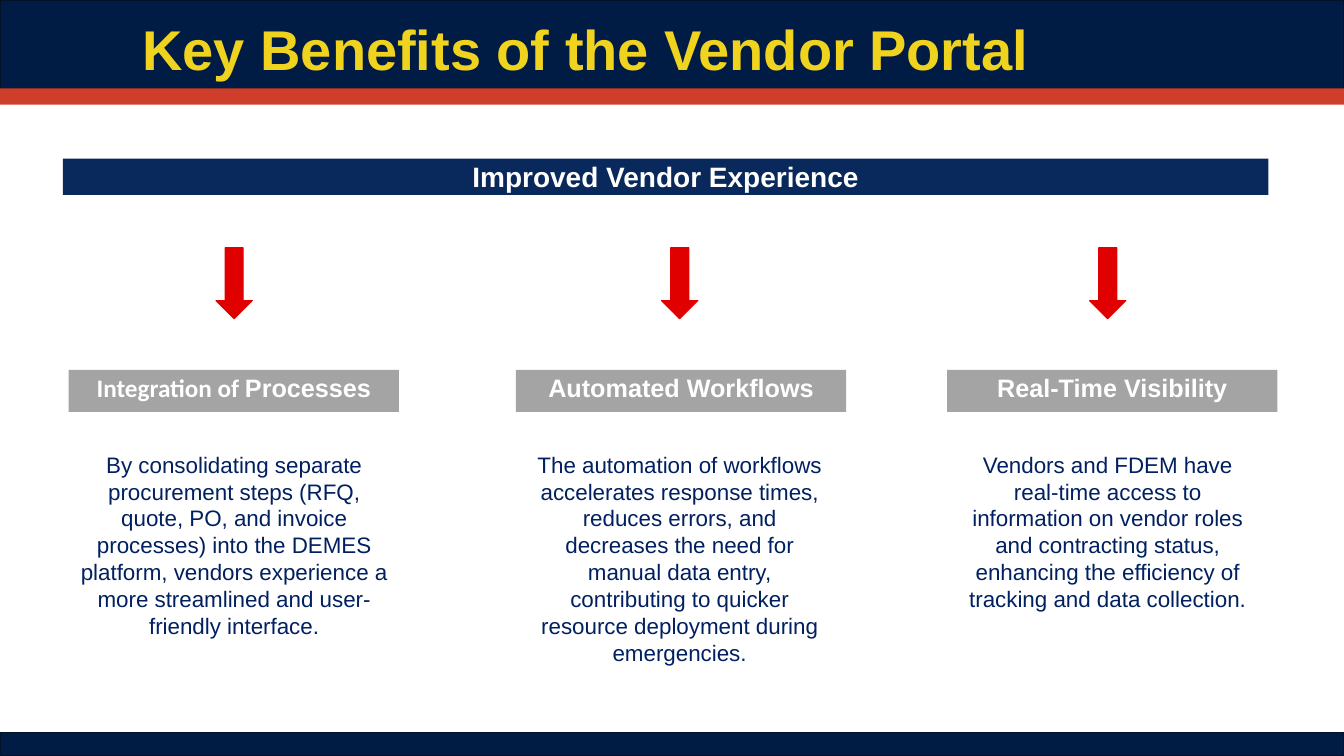
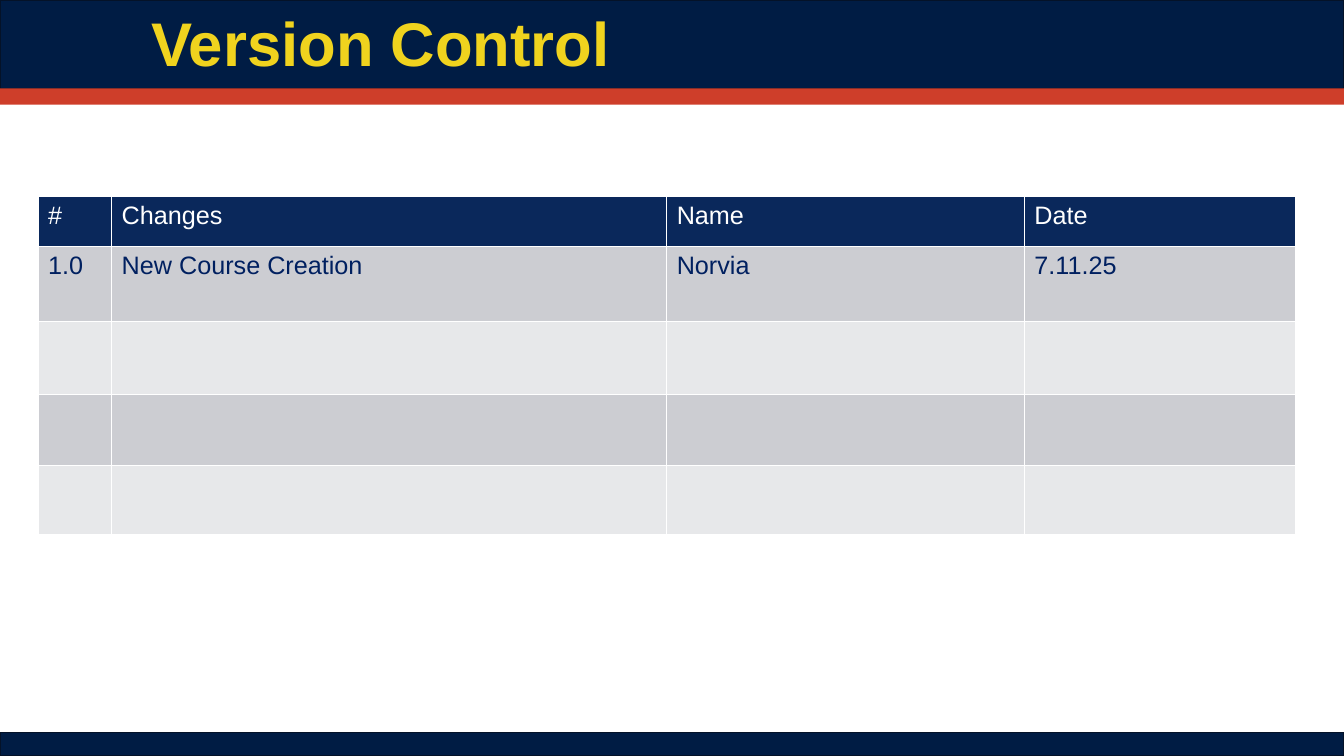
import dataclasses

import pptx
import pptx.dml.color
import pptx.enum.shapes
import pptx.enum.text
import pptx.util

Pt = pptx.util.Pt
Shape = pptx.enum.shapes.MSO_SHAPE
Align = pptx.enum.text.PP_ALIGN
Anchor = pptx.enum.text.MSO_ANCHOR


@dataclasses.dataclass(frozen=True)
class Theme:
    width: float = 960
    height: float = 540
    font: str = "Arial"
    second_font: str = "Calibri"
    navy: str = "001C44"
    navy_edge: str = "041228"
    red_band: str = "CE3E2A"
    yellow: str = "F0D31E"
    banner: str = "09285B"
    gray: str = "A4A4A4"
    arrow: str = "E00000"
    white: str = "FFFFFF"
    ink: str = "002060"
    table_header: str = "0A285B"
    table_bands: tuple = ("CCCDD2", "E7E8EA")
    title_size: float = 40
    large_title_size: float = 44
    banner_size: float = 20
    heading_size: float = 18
    body_size: float = 16


THEME = Theme()


@dataclasses.dataclass(frozen=True)
class Benefit:
    heading: tuple
    body: str
    bar_left: float
    center: float
    body_width: float


BENEFITS = (
    Benefit(
        (("Integration of ", THEME.second_font), ("Processes", THEME.font)),
        "By consolidating separate procurement steps (RFQ, quote, PO, and invoice "
        "processes) into the DEMES platform, vendors experience a more streamlined "
        "and user-friendly interface.",
        49, 167.25, 222.5,
    ),
    Benefit(
        (("Automated Workflows", THEME.font),),
        "The automation of workflows accelerates response times, reduces errors, and "
        "decreases the need for manual data entry, contributing to quicker resource "
        "deployment during emergencies.",
        368.5, 485.5, 215.5,
    ),
    Benefit(
        (("Real-Time Visibility", THEME.font),),
        "Vendors and FDEM have real-time access to information on vendor roles and "
        "contracting status, enhancing the efficiency of tracking and data collection.",
        676.5, 791.25, 210,
    ),
)

VERSION_COLUMNS = (52.5, 396.5, 255.5, 193.5)
VERSION_ROW_HEIGHTS = (35.75, 53.5, 52, 50.5, 49.5)
VERSION_ROWS = (
    ("#", "Changes", "Name", "Date"),
    ("1.0", "New Course Creation", "Norvia", "7.11.25"),
)


def rgb(color):
    return pptx.dml.color.RGBColor.from_string(color)


def apply_format(target, values):
    for name, value in values.items():
        setattr(target, name, value)


def add_run(paragraph, text, size, color, bold=False, font=THEME.font):
    run = paragraph.add_run()
    run.text = text
    apply_format(run.font, {"name": font, "size": Pt(size), "bold": bold})
    run.font.color.rgb = rgb(color)


def prepare_frame(shape, insets=(0, 0, 0, 0), anchor=Anchor.TOP, align=Align.CENTER):
    """Set insets (left, top, right, bottom) and return the first paragraph."""
    left, top, right, bottom = insets
    apply_format(shape.text_frame, {
        "word_wrap": True,
        "vertical_anchor": anchor,
        "margin_left": Pt(left),
        "margin_top": Pt(top),
        "margin_right": Pt(right),
        "margin_bottom": Pt(bottom),
    })
    paragraph = shape.text_frame.paragraphs[0]
    paragraph.alignment = align
    return paragraph


def add_block(slide, preset, box, fill, line=None, line_width=1):
    shape = slide.shapes.add_shape(preset, *map(Pt, box))
    shape.shadow.inherit = False
    shape.fill.solid()
    shape.fill.fore_color.rgb = rgb(fill)
    if line:
        shape.line.color.rgb = rgb(line)
        shape.line.width = Pt(line_width)
    else:
        shape.line.fill.background()
    return shape


def add_bands(slide):
    bands = (
        (0, 63.25, THEME.navy, THEME.navy_edge),
        (63.25, 11.5, THEME.red_band, None),
        (523.25, 16.75, THEME.navy, THEME.navy_edge),
    )
    for top, height, fill, line in bands:
        add_block(slide, Shape.RECTANGLE, (0, top, THEME.width, height), fill, line)


def add_title(slide, text, size, insets, line_spacing=1.0):
    box = slide.shapes.add_textbox(Pt(101), Pt(0), Pt(828), Pt(67))
    paragraph = prepare_frame(box, insets, Anchor.MIDDLE, Align.LEFT)
    paragraph.line_spacing = line_spacing
    add_run(paragraph, text, size, THEME.yellow, bold=True)


def add_banner(slide, text):
    banner = add_block(slide, Shape.RECTANGLE, (45, 113.25, 861, 26), THEME.banner)
    paragraph = prepare_frame(banner, anchor=Anchor.MIDDLE)
    add_run(paragraph, text, THEME.banner_size, THEME.white, bold=True)


def add_benefit(slide, benefit):
    add_block(slide, Shape.DOWN_ARROW, (benefit.center - 13, 177, 26, 50.75),
              THEME.arrow, THEME.arrow, 0.75)

    bar = add_block(slide, Shape.RECTANGLE, (benefit.bar_left, 264.25, 236, 30), THEME.gray)
    heading = prepare_frame(bar, (0, 2, 0, 0))
    for text, font in benefit.heading:
        add_run(heading, text, THEME.heading_size, THEME.white, bold=True, font=font)

    left = benefit.center - benefit.body_width / 2
    box = slide.shapes.add_textbox(Pt(left), Pt(321), Pt(benefit.body_width), Pt(156))
    paragraph = prepare_frame(box, (0, 1, 0, 0))
    add_run(paragraph, benefit.body, THEME.body_size, THEME.ink)


def add_version_table(slide):
    frame = slide.shapes.add_table(
        len(VERSION_ROW_HEIGHTS), len(VERSION_COLUMNS), Pt(27.25), Pt(140.5),
        Pt(sum(VERSION_COLUMNS)), Pt(sum(VERSION_ROW_HEIGHTS)))
    table = frame.table
    for column, width in zip(table.columns, VERSION_COLUMNS):
        column.width = Pt(width)
    for row_index, height in enumerate(VERSION_ROW_HEIGHTS):
        row = table.rows[row_index]
        row.height = Pt(height)
        is_header = row_index == 0
        fill = THEME.table_header if is_header else THEME.table_bands[(row_index - 1) % 2]
        for cell in row.cells:
            cell.fill.solid()
            cell.fill.fore_color.rgb = rgb(fill)
        if row_index < len(VERSION_ROWS):
            color = THEME.white if is_header else THEME.ink
            for cell, text in zip(row.cells, VERSION_ROWS[row_index]):
                add_run(cell.text_frame.paragraphs[0], text, THEME.heading_size, color)


def add_slide(presentation):
    slide = presentation.slides.add_slide(presentation.slide_layouts[6])
    add_bands(slide)
    return slide


def build_benefits_slide(presentation):
    slide = add_slide(presentation)
    add_title(slide, "Key Benefits of the Vendor Portal", THEME.title_size, (0.75, 1.75, 0, 0))
    add_banner(slide, "Improved Vendor Experience")
    for benefit in BENEFITS:
        add_benefit(slide, benefit)


def build_version_slide(presentation):
    slide = add_slide(presentation)
    add_title(slide, "Version Control", THEME.large_title_size, (7.2, 3.6, 7.2, 3.6), 0.9)
    add_version_table(slide)


def main():
    presentation = pptx.Presentation()
    apply_format(presentation, {
        "slide_width": Pt(THEME.width),
        "slide_height": Pt(THEME.height),
    })
    build_benefits_slide(presentation)
    build_version_slide(presentation)
    presentation.save("out.pptx")


if __name__ == "__main__":
    main()
